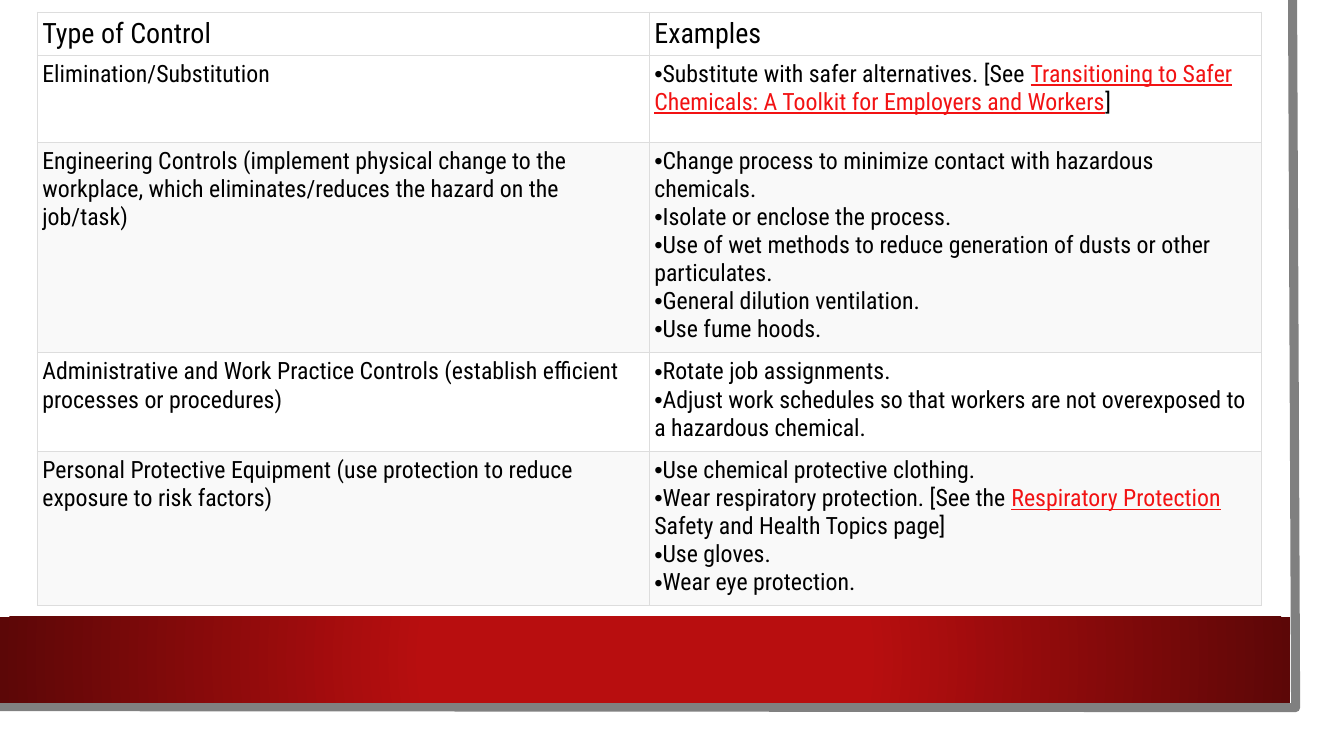
from lxml.etree import SubElement
from pptx import Presentation
from pptx.dml.color import RGBColor
from pptx.enum.shapes import MSO_SHAPE
from pptx.enum.text import MSO_ANCHOR
from pptx.oxml import parse_xml
from pptx.oxml.ns import nsdecls, qn
from pptx.util import Pt

PX = 9144
FONT = "Roboto Condensed"
WHITE = RGBColor(0xFF, 0xFF, 0xFF)
BLACK = RGBColor(0x00, 0x00, 0x00)
GRAY = RGBColor(0x80, 0x80, 0x80)
BAND_GRAY = RGBColor(0xF9, 0xF9, 0xF9)
BORDER = RGBColor(0xDD, 0xDD, 0xDD)
LINK_RED = RGBColor(0xF2, 0x12, 0x13)
RED = RGBColor(0xB8, 0x0E, 0x0F)
DARK_RED = RGBColor(0x5C, 0x07, 0x07)

LINK_MARK = "|"
ROWS = [
    (43, "Type of Control", ["Examples"]),
    (86, "Elimination/Substitution", [
        "Substitute with safer alternatives. [See |Transitioning to Safer Chemicals: "
        "A Toolkit for Employers and Workers|]",
    ]),
    (209, "Engineering Controls (implement physical change to the workplace, "
          "which eliminates/reduces the hazard on the job/task)", [
        "Change process to minimize contact with hazardous chemicals.",
        "Isolate or enclose the process.",
        "Use of wet methods to reduce generation of dusts or other particulates.",
        "General dilution ventilation.",
        "Use fume hoods.",
    ]),
    (98, "Administrative and Work Practice Controls (establish efficient "
         "processes or procedures)", [
        "Rotate job assignments.",
        "Adjust work schedules so that workers are not overexposed to a hazardous chemical.",
    ]),
    (153, "Personal Protective Equipment (use protection to reduce "
          "exposure to risk factors)", [
        "Use chemical protective clothing.",
        "Wear respiratory protection. [See the |Respiratory Protection| Safety and Health Topics page]",
        "Use gloves.",
        "Wear eye protection.",
    ]),
]


def add_borders(cell):
    tcPr = cell._tc.get_or_add_tcPr()
    for i, side in enumerate(("lnL", "lnR", "lnT", "lnB")):
        tcPr.insert(i, parse_xml(
            f'<a:{side} {nsdecls("a")} w="{Pt(0.75)}"><a:solidFill>'
            f'<a:srgbClr val="{BORDER}"/></a:solidFill></a:{side}>'))


def write_cell(cell, lines, size, bulleted):
    tf = cell.text_frame
    for i, line in enumerate(lines):
        p = tf.paragraphs[0] if i == 0 else tf.add_paragraph()
        if bulleted:
            pPr = p._p.get_or_add_pPr()
            pPr.set("marL", "0")
            pPr.set("indent", "0")
            SubElement(pPr, qn("a:buFont")).set("typeface", "Arial")
            SubElement(pPr, qn("a:buChar")).set("char", "•")
        for j, text in enumerate(line.split(LINK_MARK)):
            is_link = j % 2 == 1
            r = p.add_run()
            r.text = text
            r.font.name = FONT
            r.font.size = Pt(size)
            r.font.bold = False
            r.font.underline = is_link
            r.font.color.rgb = LINK_RED if is_link else BLACK


prs = Presentation()
prs.slide_width = 1333 * PX
prs.slide_height = 750 * PX
s = prs.slides.add_slide(prs.slide_layouts[6])

page = s.shapes.add_shape(MSO_SHAPE.RECTANGLE, 0, 0, 1310 * PX, 727 * PX)
page.shadow.inherit = False
page.fill.solid()
page.fill.fore_color.rgb = WHITE
page.line.fill.background()

builder = s.shapes.build_freeform(1282, 0, scale=PX)
builder.add_line_segments([(1285, 702), (-3, 701)], close=False)
edge = builder.convert_to_shape()
edge.shadow.inherit = False
edge.fill.background()
edge.line.color.rgb = GRAY
edge.line.width = Pt(6.5)

band = s.shapes.add_shape(MSO_SHAPE.RECTANGLE, 0, 612 * PX, 1280 * PX, 85 * PX)
band.shadow.inherit = False
band.line.fill.background()
band.fill.gradient()
for stop, position, color in zip(band.fill.gradient_stops, (0.34, 1), (RED, DARK_RED)):
    stop.position = position
    stop.color.rgb = color
grad = band._element.spPr.find(qn("a:gradFill"))
grad.replace(grad.find(qn("a:lin")), parse_xml(
    f'<a:path {nsdecls("a")} path="circle">'
    '<a:fillToRect l="50000" t="50000" r="50000" b="50000"/></a:path>'))

table = s.shapes.add_table(
    len(ROWS), 2, 37 * PX, 12 * PX, 1214 * PX, sum(row[0] for row in ROWS) * PX).table
table.first_row = False
table.horz_banding = False
for col in table.columns:
    col.width = 607 * PX

for i, (height, control, examples) in enumerate(ROWS):
    table.rows[i].height = height * PX
    is_header = i == 0
    for j, lines in enumerate(([control], examples)):
        cell = table.cell(i, j)
        cell.margin_left = cell.margin_right = 5 * PX
        cell.margin_top = cell.margin_bottom = 5 * PX
        cell.vertical_anchor = MSO_ANCHOR.BOTTOM if is_header else MSO_ANCHOR.TOP
        if i > 0 and i % 2 == 0:
            cell.fill.solid()
            cell.fill.fore_color.rgb = BAND_GRAY
        else:
            cell.fill.background()
        add_borders(cell)
        write_cell(cell, lines, 20 if is_header else 17, j == 1 and not is_header)

prs.save("out.pptx")
